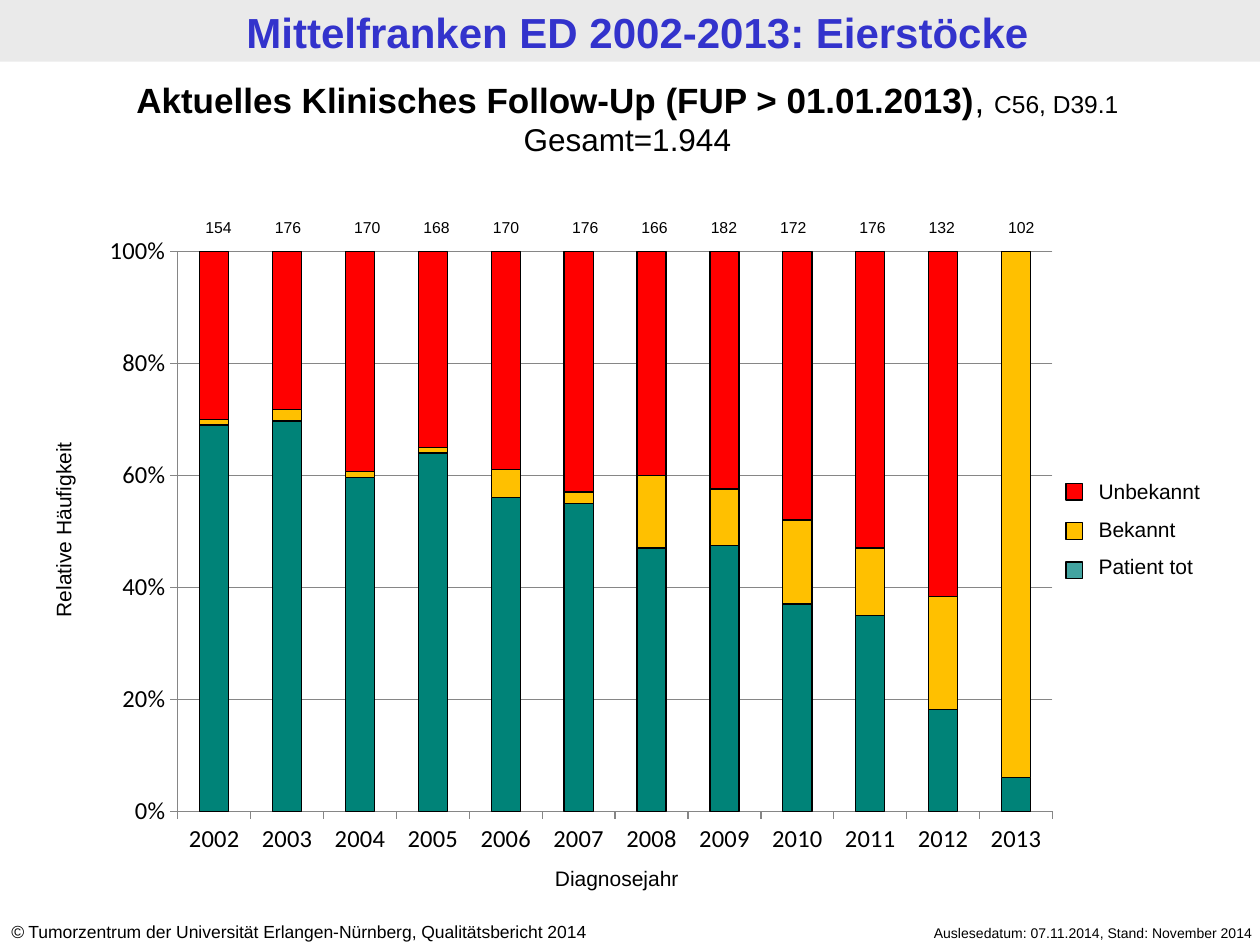
from lxml.etree import SubElement
from pptx import Presentation
from pptx.chart.data import CategoryChartData
from pptx.dml.color import RGBColor
from pptx.enum.chart import XL_CHART_TYPE, XL_TICK_MARK
from pptx.enum.shapes import MSO_SHAPE
from pptx.enum.text import MSO_ANCHOR, MSO_AUTO_SIZE, PP_ALIGN
from pptx.oxml import parse_xml
from pptx.oxml.ns import nsdecls, qn
from pptx.util import Inches, Pt

BLACK = RGBColor(0, 0, 0)
BLUE = RGBColor(0x33, 0x33, 0xCC)
PALE = RGBColor(0xEA, 0xEA, 0xEA)
GRAY = RGBColor(0x86, 0x86, 0x86)
TEAL = RGBColor(0, 0x83, 0x78)
MINT = RGBColor(0, 0x83, 0x80)
GOLD = RGBColor(0xFF, 0xC0, 0)
RED = RGBColor(0xFF, 0, 0)

LEFT, MID, RIGHT = PP_ALIGN.LEFT, PP_ALIGN.CENTER, PP_ALIGN.RIGHT
YEARS = [str(year) for year in range(2002, 2014)]
SERIES = [
    ("Patient tot", TEAL, (69, 69, 59, 64, 56, 55, 47, 47, 37, 35, 18, 6)),
    ("Bekannt", GOLD, (1, 2, 1, 1, 5, 2, 13, 10, 15, 12, 20, 94)),
    ("Unbekannt", RED, (30, 28, 39, 35, 39, 43, 40, 42, 48, 53, 61, 0)),
]
COUNTS = [154, 176, 170, 168, 170, 176, 166, 182, 172, 176, 132, 102]
STEPS = [0, 0.55, 1.18, 1.73, 2.28, 2.91, 3.46, 4.01, 4.56, 5.19, 5.74, 6.37]


def apply(item, form):
    for key, value in form.items():
        setattr(item, key, value)


def write(frame, lines, align=LEFT, gap=0):
    """Each line is a list of (text, format) runs."""
    for i, runs in enumerate(lines):
        para = frame.paragraphs[0] if i == 0 else frame.add_paragraph()
        para.alignment = align
        if i and gap:
            para.space_before = Pt(gap)
        for text, form in runs:
            run = para.add_run()
            run.text = text
            apply(run.font, {"name": "Arial", **form})
            run.font.color.rgb = BLACK


def add_text(slide, box, lines, align=LEFT, gap=0):
    shape = slide.shapes.add_textbox(*map(Inches, box))
    shape.text_frame.word_wrap = True
    write(shape.text_frame, lines, align, gap)
    return shape


def add_rect(slide, box, fill, line=None):
    rect = slide.shapes.add_shape(MSO_SHAPE.RECTANGLE, *map(Inches, box))
    rect.shadow.inherit = False
    rect.fill.solid()
    rect.fill.fore_color.rgb = fill
    if line is None:
        rect.line.fill.background()
    else:
        rect.line.color.rgb = line
        rect.line.width = Pt(0.75)
    return rect


def add_banner(slide, box):
    left, top, width, height = box
    band = add_rect(slide, box, PALE)
    title = slide.shapes.title
    # The band lies behind the title
    title.element.addprevious(band.element)
    apply(title, {"left": Inches(left + 0.06), "top": Inches(top + 0.01),
                  "width": Inches(width), "height": Inches(height)})
    frame = title.text_frame
    frame.text = "Mittelfranken ED 2002-2013: Eierstöcke"
    apply(frame, {"auto_size": MSO_AUTO_SIZE.NONE, "word_wrap": True,
                  "vertical_anchor": MSO_ANCHOR.MIDDLE,
                  "margin_top": Inches(0.04), "margin_bottom": Inches(0.04)})
    para = frame.paragraphs[0]
    para.alignment = MID
    apply(para.runs[0].font, {"name": "Arial", "size": Pt(24), "bold": True})
    para.runs[0].font.color.rgb = BLUE


def add_heading(slide, box):
    add_text(slide, box, [
        [("Aktuelles Klinisches Follow-Up (FUP > 01.01.2013)",
          {"size": Pt(20), "bold": True}),
         (", ", {"size": Pt(20)}), ("C56, D39.1", {"size": Pt(14)})],
        [("Gesamt=1.944", {"size": Pt(18)})]], MID)


def set_plot(chart, x, y, w, h):
    area = chart.element.find(".//" + qn("c:plotArea"))
    for old in area.findall(qn("c:layout")):
        area.remove(old)
    layout = parse_xml(f"<c:layout {nsdecls('c')}/>")
    area.insert(0, layout)
    manual = SubElement(layout, qn("c:manualLayout"))
    parts = {"layoutTarget": "inner", "xMode": "edge", "yMode": "edge",
             "x": x, "y": y, "w": w, "h": h}
    for tag, value in parts.items():
        SubElement(manual, qn("c:" + tag)).set("val", str(value))


def add_bars(slide, box):
    data = CategoryChartData()
    data.categories = YEARS
    for name, _, values in SERIES:
        data.add_series(name, values)
    chart = slide.shapes.add_chart(
        XL_CHART_TYPE.COLUMN_STACKED_100, *map(Inches, box), data).chart
    apply(chart, {"has_legend": False, "has_title": False})
    apply(chart.font, {"name": "Calibri", "size": Pt(18)})
    chart.font.color.rgb = BLACK
    plot = chart.plots[0]
    apply(plot, {"gap_width": 150, "overlap": 100,
                 "vary_by_categories": False})
    for series, (_, color, _) in zip(plot.series, SERIES):
        series.format.fill.solid()
        series.format.fill.fore_color.rgb = color
        series.format.line.color.rgb = BLACK
        series.format.line.width = Pt(0.75)
    # Axes
    scale = chart.value_axis
    for axis in (chart.category_axis, scale):
        axis.major_tick_mark = XL_TICK_MARK.OUTSIDE
        axis.tick_labels.font.size = Pt(14)
        axis.format.line.color.rgb = GRAY
    apply(scale, {"minimum_scale": 0, "maximum_scale": 1, "major_unit": 0.2,
                  "has_major_gridlines": True})
    scale.major_gridlines.format.line.color.rgb = GRAY
    apply(scale.tick_labels, {"number_format": "0%",
                              "number_format_is_linked": False})
    set_plot(chart, 0.09, 0.04, 0.89, 0.87)


def add_names(slide, box):
    """Axis names, left of and below the chart box."""
    left, top, _, height = box
    form = {"size": Pt(12)}
    side = add_text(slide, (left - 1.41, top + 2.26, 2.41, 0.31),
                    [[("Relative Häufigkeit", form)]], MID)
    side.rotation = 270
    add_text(slide, (left + 3.06, top + height - 0.08, 2.25, 0.31),
             [[("Diagnosejahr", form)]], MID)


def add_counts(slide, box):
    left, top, width, height = box
    for step, count in zip(STEPS, COUNTS):
        add_text(slide, (left + step, top, width, height),
                 [[(str(count), {"size": Pt(9)})]], MID)


def add_key(slide, box):
    left, top, width, height = box
    names = [name for name, _, _ in reversed(SERIES)]
    add_text(slide, (left + 0.16, top, width - 0.16, height),
             [[(name, {"size": Pt(12)})] for name in names], gap=7)
    for i, color in enumerate((RED, GOLD, MINT)):
        mark = add_rect(slide, (left, top + 0.09 + 0.31 * i, 0.13, 0.13),
                        color, BLACK)
        if color == MINT:
            tone = mark.element.find(".//" + qn("a:srgbClr"))
            SubElement(tone, qn("a:alpha")).set("val", "74000")


def add_footer(slide, box):
    left, top, width, height = box
    add_text(slide, (left, top, 5.24, height), [
        [("©", {"size": Pt(10), "italic": True}),
         (" Tumorzentrum der Universität Erlangen-Nürnberg, "
          "Qualitätsbericht 2014", {"size": Pt(10)})]])
    add_text(slide, (left + width - 3.39, top + 0.03, 3.39, 0.24), [
        [("Auslesedatum: 07.11.2014, Stand: November 2014",
          {"size": Pt(8)})]], RIGHT)


def main():
    deck = Presentation()
    deck.slide_width, deck.slide_height = Inches(10), Inches(7.5)
    slide = deck.slides.add_slide(deck.slide_layouts[5])
    area = (0.71, 1.79, 7.8, 5.11)
    add_banner(slide, (0, 0, 10, 0.49))
    add_footer(slide, (-0.01, 7.26, 10.05, 0.27))
    add_bars(slide, area)
    add_names(slide, area)
    add_heading(slide, (-0.04, 0.57, 10.04, 0.74))
    add_counts(slide, (1.46, 1.68, 0.55, 0.25))
    add_key(slide, (8.46, 3.75, 1.58, 0.91))
    deck.save("out.pptx")


if __name__ == "__main__":
    main()
